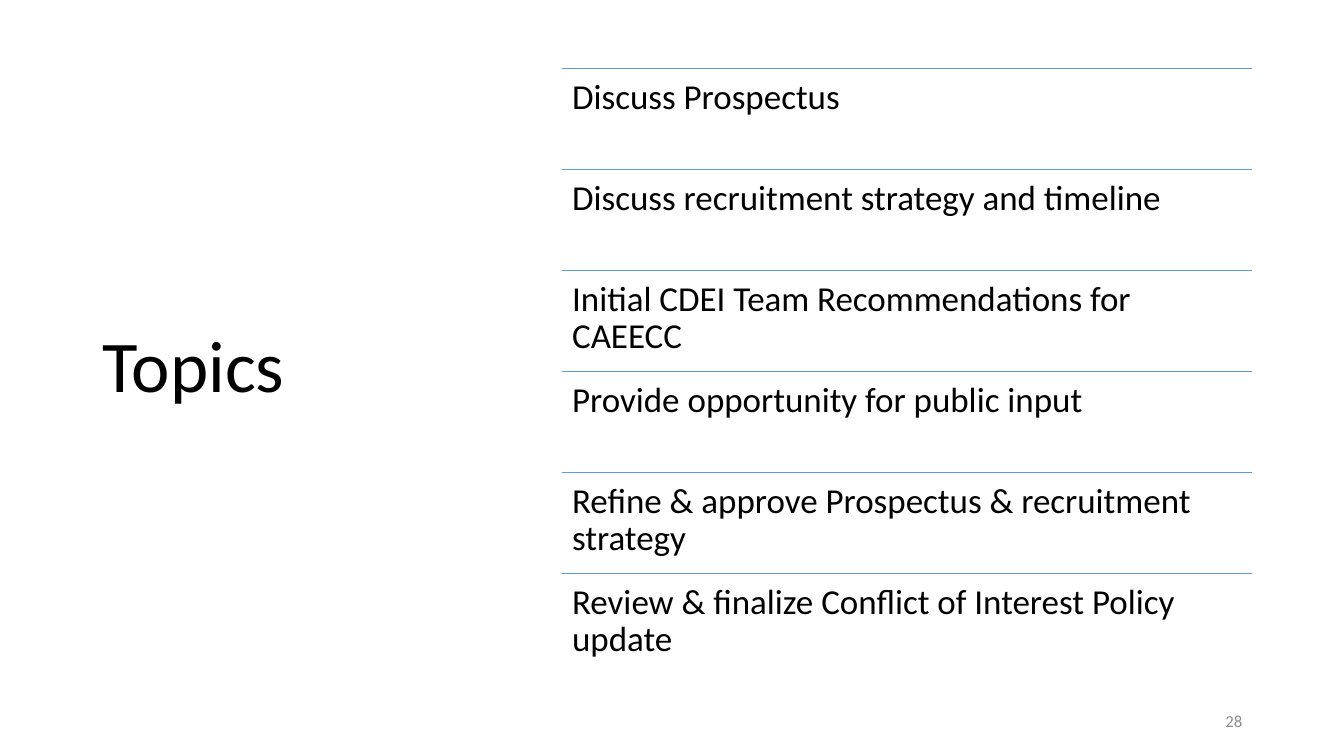
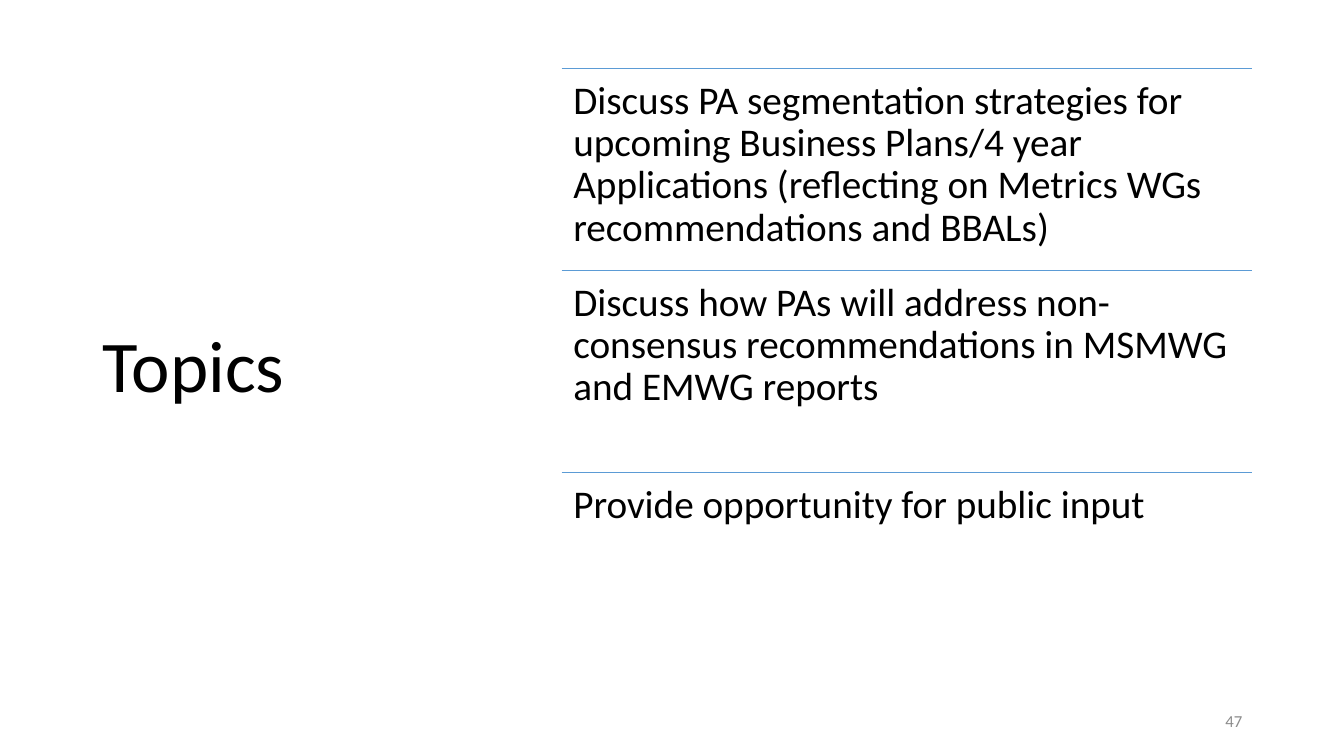
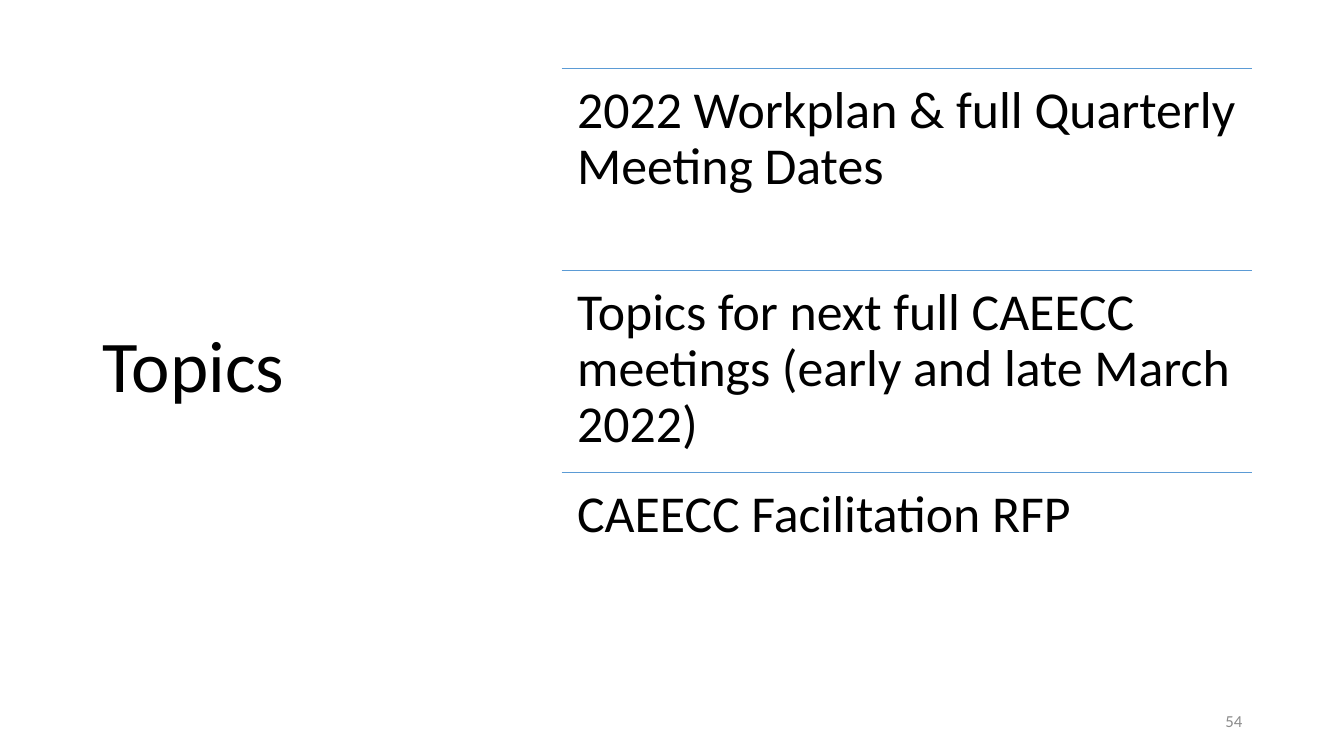
from pptx import Presentation
from pptx.dml.color import RGBColor
from pptx.enum.shapes import MSO_CONNECTOR
from pptx.enum.text import MSO_ANCHOR, MSO_AUTO_SIZE, PP_ALIGN
from pptx.oxml.ns import qn
from pptx.util import Inches, Pt
from lxml import etree

BLACK = RGBColor(0x00, 0x00, 0x00)
BLUE = RGBColor(0x5B, 0x9B, 0xD5)
GRAY = RGBColor(0x8C, 0x8C, 0x8C)
FONT = "Calibri"

# Topic list area, in inches
LIST_LEFT, LIST_TOP, LIST_WIDTH, LIST_HEIGHT = 5.57, 0.68, 6.85, 6.01

# Page number, text size, topics
SLIDES = [
    (28, 25, [
        "Discuss Prospectus",
        "Discuss recruitment strategy and timeline",
        "Initial CDEI Team Recommendations for CAEECC",
        "Provide opportunity for public input",
        "Refine & approve Prospectus & recruitment strategy",
        "Review & finalize Conflict of Interest Policy update",
    ]),
    (47, 28, [
        "Discuss PA segmentation strategies for upcoming Business Plans/4 year "
        "Applications (reflecting on Metrics WGs recommendations and BBALs)",
        "Discuss how PAs will address non-consensus recommendations in MSMWG "
        "and EMWG reports",
        "Provide opportunity for public input",
    ]),
    (54, 37, [
        "2022 Workplan & full Quarterly Meeting Dates",
        "Topics for next full CAEECC meetings (early and late March 2022)",
        "CAEECC Facilitation RFP",
    ]),
]


class Deck:
    def __init__(self):
        self.prs = Presentation()
        self.prs.slide_width = Inches(13.33)
        self.prs.slide_height = Inches(7.5)
        self.s = None

    def add_slide(self):
        self.s = self.prs.slides.add_slide(self.prs.slide_layouts[5])

    def set_text(self, sp, text, size, color=BLACK, anchor=MSO_ANCHOR.TOP,
                 align=PP_ALIGN.LEFT, spacing=0.9):
        tf = sp.text_frame
        tf.word_wrap = True
        tf.auto_size = MSO_AUTO_SIZE.NONE
        tf.vertical_anchor = anchor
        p = tf.paragraphs[0]
        p.alignment = align
        p.line_spacing = spacing
        r = p.add_run()
        r.text = text
        r.font.name = FONT
        r.font.size = Pt(size)
        r.font.color.rgb = color
        return tf

    def title(self, text):
        sp = self.s.shapes.title
        sp.left, sp.top = Inches(0.92), Inches(0.61)
        sp.width, sp.height = Inches(3.69), Inches(6.09)
        self.set_text(sp, text, 52, anchor=MSO_ANCHOR.MIDDLE)

    def rule(self, top):
        line = self.s.shapes.add_connector(
            MSO_CONNECTOR.STRAIGHT, Inches(LIST_LEFT), Inches(top),
            Inches(LIST_LEFT + LIST_WIDTH), Inches(top))
        line.line.color.rgb = BLUE
        line.line.width = Pt(1)
        etree.SubElement(line._element.spPr, qn("a:effectLst"))

    def topic(self, text, top, height, size):
        sp = self.s.shapes.add_textbox(
            Inches(LIST_LEFT), Inches(top), Inches(LIST_WIDTH), Inches(height))
        tf = self.set_text(sp, text, size)
        # Padding grows with the text size
        inset = Pt(0.3 * size)
        tf.margin_left = tf.margin_right = inset
        tf.margin_top = tf.margin_bottom = inset

    def topics(self, items, size):
        height = LIST_HEIGHT / len(items)
        for i, text in enumerate(items):
            top = LIST_TOP + i * height
            self.rule(top)
            self.topic(text, top, height, size)

    def page_number(self, number):
        sp = self.s.shapes.add_textbox(
            Inches(9.42), Inches(6.95), Inches(3), Inches(0.4))
        self.set_text(sp, str(number), 12, GRAY, MSO_ANCHOR.MIDDLE,
                      PP_ALIGN.RIGHT, 1.0)


def main():
    deck = Deck()
    for number, size, items in SLIDES:
        deck.add_slide()
        deck.title("Topics")
        deck.topics(items, size)
        deck.page_number(number)
    deck.prs.save("out.pptx")


if __name__ == "__main__":
    main()
